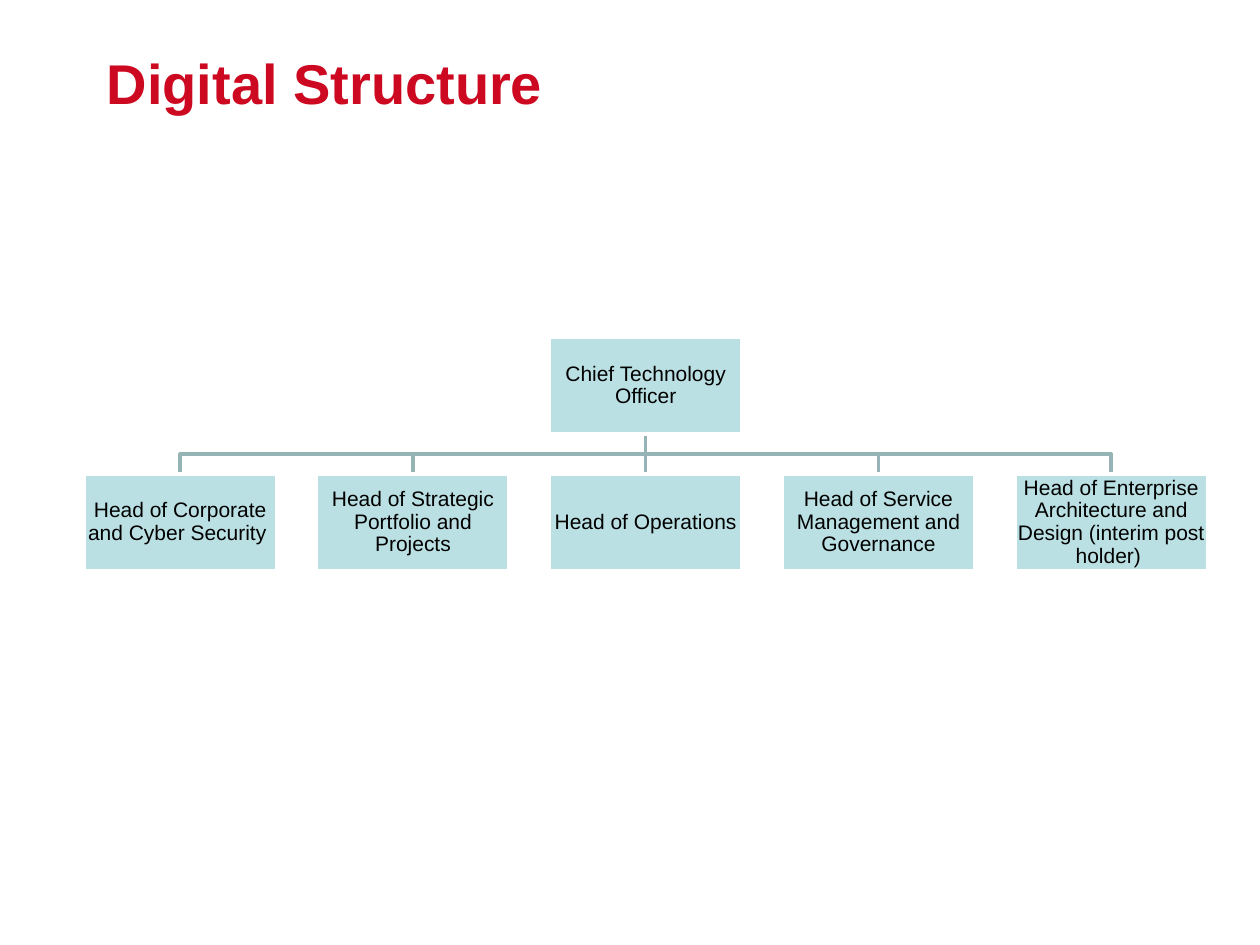
from pptx import Presentation
from pptx.dml.color import RGBColor
from pptx.enum.shapes import MSO_CONNECTOR, MSO_SHAPE
from pptx.enum.text import MSO_ANCHOR, PP_ALIGN
from pptx.oxml.ns import qn
from pptx.util import Pt
from lxml.etree import SubElement

RED = RGBColor(0xCD, 0x09, 0x21)
TEAL = RGBColor(0xBB, 0xE0, 0xE3)
GREY = RGBColor(0x96, 0xB3, 0xB6)
WHITE = RGBColor(0xFF, 0xFF, 0xFF)
BLACK = RGBColor(0, 0, 0)

BOX_W, BOX_H = 110, 55
PITCH = 133
CENTRE_X = 369
CHIEF_Y, HEADS_Y = 193, 271

CHIEF = "Chief Technology Officer"
HEADS = [
    "Head of Corporate and Cyber Security ",
    "Head of Strategic Portfolio and Projects",
    "Head of Operations",
    "Head of Service Management and Governance",
    "Head of Enterprise Architecture and Design (interim post holder) ",
]


def write_text(tf, text, size=12, color=BLACK, bold=False, align=PP_ALIGN.LEFT,
               anchor=MSO_ANCHOR.TOP, line_spacing=None, space_after=None):
    tf.word_wrap = True
    tf.vertical_anchor = anchor
    p = tf.paragraphs[0]
    p.alignment = align
    p.line_spacing = line_spacing
    p.space_after = space_after
    r = p.add_run()
    r.text = text
    r.font.name = "Arial"
    r.font.size = Pt(size)
    r.font.bold = bold
    r.font.color.rgb = color


class OrgChart:
    def __init__(self, slide, line_width=2):
        self.shapes = slide.shapes
        self.line_width = Pt(line_width)

    def outline(self, sp, color):
        sp.line.color.rgb = color
        sp.line.width = self.line_width

    def title(self, text):
        tb = self.shapes.add_textbox(Pt(54), Pt(24), Pt(642), Pt(90))
        write_text(tb.text_frame, text, size=32, color=RED, bold=True)

    def box(self, text, centre_x, top):
        sp = self.shapes.add_shape(MSO_SHAPE.RECTANGLE, Pt(centre_x - BOX_W / 2),
                                   Pt(top), Pt(BOX_W), Pt(BOX_H))
        sp.shadow.inherit = False
        sp.fill.solid()
        sp.fill.fore_color.rgb = TEAL
        self.outline(sp, WHITE)
        tf = sp.text_frame
        tf.margin_left = tf.margin_right = tf.margin_top = tf.margin_bottom = Pt(0.6)
        write_text(tf, text, align=PP_ALIGN.CENTER, anchor=MSO_ANCHOR.MIDDLE,
                   line_spacing=0.9, space_after=Pt(4.2))

    def straight_link(self, x, top, bottom):
        line = self.shapes.add_connector(MSO_CONNECTOR.STRAIGHT,
                                         Pt(x), Pt(top), Pt(x), Pt(bottom))
        self.outline(line, GREY)
        sp_pr = line._element.find(qn("p:spPr"))
        SubElement(sp_pr, qn("a:effectLst"))

    def bent_link(self, x1, top, x2, bottom):
        """Draw a line down, across at half height, and down again."""
        middle = (top + bottom) / 2
        builder = self.shapes.build_freeform(Pt(x1), Pt(top))
        builder.add_line_segments(
            [(Pt(x), Pt(y)) for x, y in ((x1, middle), (x2, middle), (x2, bottom))],
            close=False)
        sp = builder.convert_to_shape()
        sp.shadow.inherit = False
        sp.fill.background()
        self.outline(sp, GREY)


def main():
    prs = Presentation()
    prs.slide_width, prs.slide_height = Pt(720), Pt(540)
    s = prs.slides.add_slide(prs.slide_layouts[6])
    chart = OrgChart(s)
    chart.title("Digital Structure")

    middle = len(HEADS) // 2
    centres = [CENTRE_X + (i - middle) * PITCH for i in range(len(HEADS))]
    chief_bottom = CHIEF_Y + BOX_H
    for x in reversed(centres):
        if x == CENTRE_X:
            chart.straight_link(x, chief_bottom, HEADS_Y)
        else:
            chart.bent_link(CENTRE_X, chief_bottom, x, HEADS_Y)

    chart.box(CHIEF, CENTRE_X, CHIEF_Y)
    for head, x in zip(HEADS, centres):
        chart.box(head, x, HEADS_Y)
    prs.save("out.pptx")


if __name__ == "__main__":
    main()
